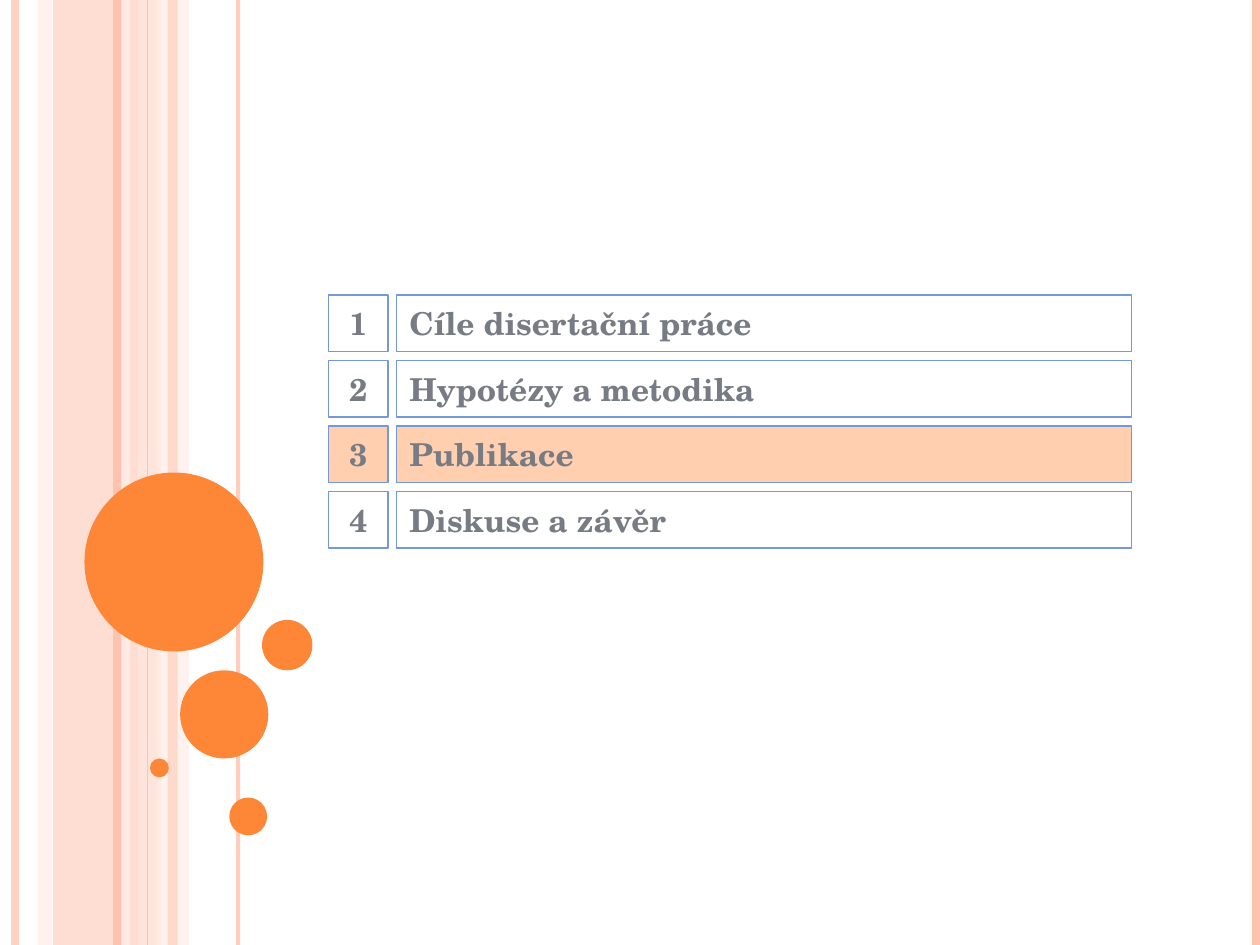
"""Build an agenda slide with striped side bands, bubbles and four numbered sections."""
from lxml.etree import SubElement
from pptx import Presentation
from pptx.dml.color import RGBColor
from pptx.enum.shapes import MSO_CONNECTOR, MSO_SHAPE
from pptx.enum.text import MSO_ANCHOR, PP_ALIGN
from pptx.oxml.ns import qn
from pptx.util import Inches, Pt

COLORS = {
    "rose": "FEC3AE",
    "blush": "FFD9CE",
    "pale": "FFEDE8",
    "orange": "FE8637",
    "peach": "FFCFAF",
    "blue": "7598D9",
    "gray": "777C84",
}
FONT = "TeX Gyre Schola"


def set_opacity(shape, percent):
    for color in shape._element.spPr.iter(qn("a:srgbClr")):
        SubElement(color, qn("a:alpha"), val=str(percent * 1000))


def add_text_box(text, left, top, width, height, fill=None, align=PP_ALIGN.LEFT, size=18):
    box = slide.shapes.add_shape(
        MSO_SHAPE.RECTANGLE, Inches(left), Inches(top), Inches(width), Inches(height)
    )
    box.shadow.inherit = False
    if fill:
        box.fill.solid()
        box.fill.fore_color.rgb = RGBColor.from_string(COLORS[fill])
    else:
        box.fill.background()
    box.line.color.rgb = RGBColor.from_string(COLORS["blue"])
    box.line.width = Pt(0.75)
    frame = box.text_frame
    frame.word_wrap = True
    frame.vertical_anchor = MSO_ANCHOR.MIDDLE
    paragraph = frame.paragraphs[0]
    paragraph.alignment = align
    run = paragraph.add_run()
    run.text = text
    run.font.name = FONT
    run.font.size = Pt(size)
    run.font.bold = True
    run.font.color.rgb = RGBColor.from_string(COLORS["gray"])


prs = Presentation()
prs.slide_width = Inches(10)
prs.slide_height = Inches(7.5)
slide = prs.slides.add_slide(prs.slide_layouts[6])

bands = [
    (0.42, 0.67, "rose", 54),
    (0.3, 0.11, "blush", 36),
    (1.08, 0.2, "blush", 70),
    (1.25, 0.25, "pale", 71),
]
stripes = [
    (0.12, 4.5, "rose", 73),
    (1, 4.5, "pale", 83),
    (0.93, 4.5, "rose", 100),
    (1.89, 2.25, "rose", 82),
    (1.17, 0.75, "rose", 100),
    (9.97, 4.5, "rose", 100),
]
top_band = (1.33, 0.08, "rose", 51)
bubbles = [
    (0.67, 3.75, 1.42),
    (1.43, 5.32, 0.7),
    (1.19, 6.02, 0.15),
    (1.82, 6.33, 0.3),
    (2.08, 4.92, 0.4),
]

decorations = [(MSO_SHAPE.RECTANGLE, left, 0, width, 7.5, color, opacity)
               for left, width, color, opacity in bands]
decorations += [(None, x, 0, weight, 7.5, color, opacity)
                for x, weight, color, opacity in stripes]
left, width, color, opacity = top_band
decorations.append((MSO_SHAPE.RECTANGLE, left, 0, width, 7.5, color, opacity))
decorations += [(MSO_SHAPE.OVAL, left, top, diameter, diameter, "orange", 100)
                for left, top, diameter in bubbles]

for kind, left, top, width, height, color, opacity in decorations:
    rgb = RGBColor.from_string(COLORS[color])
    if kind is None:
        decoration = slide.shapes.add_connector(
            MSO_CONNECTOR.STRAIGHT, Inches(left), Inches(top), Inches(left), Inches(height)
        )
        decoration.line.color.rgb = rgb
        decoration.line.width = Pt(width)
        SubElement(decoration._element.spPr, qn("a:effectLst"))
    else:
        decoration = slide.shapes.add_shape(
            kind, Inches(left), Inches(top), Inches(width), Inches(height)
        )
        decoration.shadow.inherit = False
        decoration.fill.solid()
        decoration.fill.fore_color.rgb = rgb
        decoration.line.fill.background()
    if opacity < 100:
        set_opacity(decoration, opacity)

sections = ["Cíle disertační práce", "Hypotézy a metodika", "Publikace", "Diskuse a závěr"]
current_section = "Publikace"
for index, section in enumerate(sections):
    row_top = 2.34 + 0.52 * index
    highlight = "peach" if section == current_section else None
    add_text_box(section, 3.15, row_top, 5.83, 0.45, fill=highlight)
    add_text_box(str(index + 1), 2.61, row_top, 0.47, 0.45, fill=highlight, align=PP_ALIGN.CENTER)

prs.save("out.pptx")
